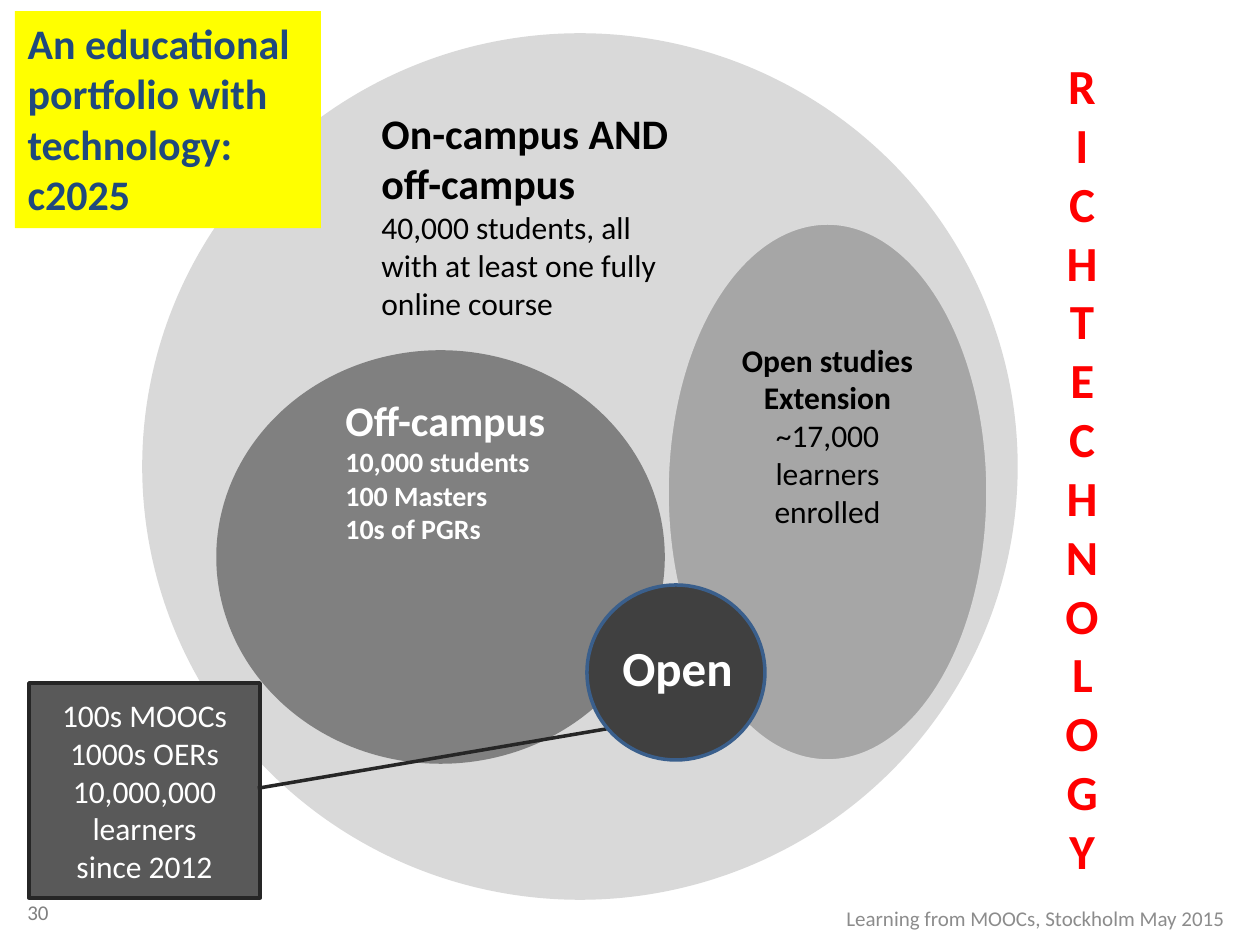
from dataclasses import dataclass

from pptx import Presentation
from pptx.dml.color import RGBColor
from pptx.enum.shapes import MSO_SHAPE as Shape
from pptx.enum.text import MSO_ANCHOR as Anchor, MSO_AUTO_SIZE as Fit, PP_ALIGN as Align
from pptx.util import Pt

PX = 914400 / 126


@dataclass(frozen=True)
class Theme:
    font: str = "Calibri"
    campus: str = "D9D9D9"
    remote: str = "808080"
    extension: str = "A6A6A6"
    hub: str = "404040"
    hub_edge: str = "3A5F8C"
    callout: str = "595959"
    callout_edge: str = "262626"
    highlight: str = "FFFF00"
    title: str = "1F497D"
    accent: str = "FF0000"
    footer: str = "8C8C8C"
    black: str = "000000"
    white: str = "FFFFFF"
    display: int = 28
    heading: int = 24
    body: int = 18
    detail: int = 16
    small: int = 12
    edge: int = 2


class Board:
    """Draws styled elements on one slide, measured in px."""

    def __init__(self, slide, theme):
        self.slide = slide
        self.theme = theme

    def box(self, *lengths):
        return [round(length * PX) for length in lengths]

    def fill_text(self, frame, lines, color, align=Align.LEFT, anchor=Anchor.TOP):
        frame.word_wrap = True
        frame.vertical_anchor = anchor
        frame.text = "\n".join(text for text, _, _ in lines)
        for paragraph, (_, size, bold) in zip(frame.paragraphs, lines):
            paragraph.alignment = align
            for run in paragraph.runs:
                run.font.name = self.theme.font
                run.font.size = Pt(size)
                run.font.bold = bold
                run.font.color.rgb = RGBColor.from_string(color)

    def title(self, area, text):
        title = self.slide.shapes.title
        title.left, title.top, title.width, title.height = self.box(*area)
        title.fill.solid()
        title.fill.fore_color.rgb = RGBColor.from_string(self.theme.highlight)
        self.fill_text(title.text_frame, [(text, self.theme.heading, True)], self.theme.title)
        title.text_frame.auto_size = Fit.SHAPE_TO_FIT_TEXT
        title.element.getparent().append(title.element)

    def shape(self, kind, area, fill, edge):
        shape = self.slide.shapes.add_shape(kind, *self.box(*area))
        shape.shadow.inherit = False
        shape.fill.solid()
        shape.fill.fore_color.rgb = RGBColor.from_string(fill)
        shape.line.color.rgb = RGBColor.from_string(edge)
        shape.line.width = Pt(self.theme.edge)
        return shape

    def label(self, area, lines, color, align=Align.LEFT, anchor=Anchor.TOP):
        label = self.slide.shapes.add_textbox(*self.box(*area))
        self.fill_text(label.text_frame, lines, color, align, anchor)
        return label

    def stacked(self, area, lines, color):
        frame = self.label(area, lines, color, Align.CENTER).text_frame
        frame.auto_size = Fit.SHAPE_TO_FIT_TEXT
        frame._txBody.bodyPr.set("vert", "wordArtVert")


def main():
    deck = Presentation()
    deck.slide_width, deck.slide_height = round(1260 * PX), round(945 * PX)
    theme = Theme()
    board = Board(deck.slides.add_slide(deck.slide_layouts[5]), theme)

    board.shape(Shape.OVAL, (144, 35, 872, 863), theme.campus, theme.campus)
    board.shape(Shape.OVAL, (218, 352, 445, 410), theme.remote, theme.remote)
    board.label((369, 101, 336, 217), [
        ("On-campus AND off-campus", theme.heading, True),
        ("40,000 students, all with at least one fully online course", theme.body, False),
    ], theme.black)
    board.label((333, 388, 236, 156), [
        ("Off-campus", theme.heading, True),
        ("10,000 students", theme.detail, True),
        ("100 Masters", theme.detail, True),
        ("10s of PGRs", theme.detail, True),
    ], theme.white)
    board.stacked((999, 102, 166, 731), [
        ("RICH", theme.display, True),
        ("TECHNOLOGY", theme.display, True),
    ], theme.accent)
    board.title((15, 11, 306, 217), "An educational portfolio with technology: c2025")

    reach = board.shape(Shape.LINE_CALLOUT_1, (29, 683, 231, 215),
                        theme.callout, theme.callout_edge)
    for index, value in enumerate((0.49, 0.99, 0.21, 2.52)):
        reach.adjustments[index] = value
    board.fill_text(reach.text_frame, [
        (text, theme.body, False)
        for text in ("100s MOOCs", "1000s OERs", "10,000,000 learners", "since 2012")
    ], theme.white, Align.CENTER, Anchor.MIDDLE)

    extension = board.shape(Shape.OVAL, (667, 223, 321, 538), theme.extension, theme.campus)
    board.fill_text(extension.text_frame, [
        ("Open studies", theme.body, True),
        ("Extension", theme.body, True),
        ("~17,000 learners enrolled", theme.body, False),
    ], theme.black, Align.CENTER, Anchor.MIDDLE)
    extension.text_frame.margin_bottom = round(120 * PX)

    board.shape(Shape.OVAL, (587, 585, 178, 175), theme.hub, theme.hub_edge)
    board.label((610, 631, 154, 72), [("Open", theme.display, True)], theme.white)

    board.label((15, 895, 50, 34), [("30", theme.small, False)],
                theme.remote, anchor=Anchor.MIDDLE)
    board.label((709, 900, 528, 37),
                [("Learning from MOOCs, Stockholm May 2015", theme.small, False)],
                theme.footer, Align.RIGHT, Anchor.MIDDLE)
    deck.save("out.pptx")


if __name__ == "__main__":
    main()
